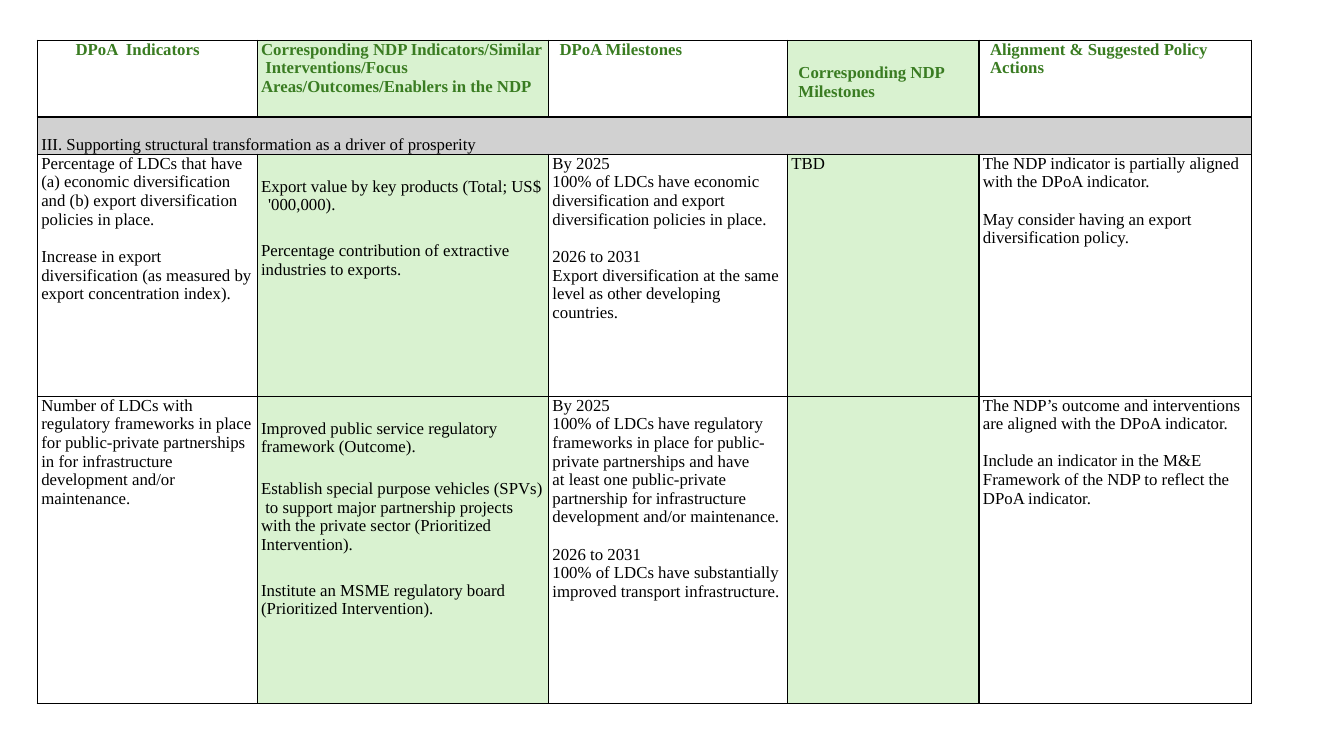
from dataclasses import dataclass

from lxml import etree
from pptx import Presentation
from pptx import util as u
from pptx.dml import color
from pptx.enum import text
from pptx.oxml import ns


@dataclass(frozen=True)
class Theme:
    font: str = "Times New Roman"
    size: float = 12
    blank_line: float = 13.3
    wide_gap: float = 19.5
    heading: str = "3A7C22"
    body: str = "000000"
    border: str = "000000"
    border_width: float = 1
    ndp_fill: str = "D9F2D0"
    section_fill: str = "D1D1D1"


THEME = Theme()


@dataclass(frozen=True)
class Line:
    text: str
    before: float = 0
    indent: float = 0
    justified: bool = False


@dataclass(frozen=True)
class Entry:
    lines: tuple[Line, ...] = ()
    top: float = 0


GAP = THEME.blank_line
WIDE = THEME.wide_gap
COLUMN_WIDTHS = (2.18, 2.89, 2.37, 1.9, 2.7)
ROW_HEIGHTS = (0.76, 0.37, 2.4, 3.05)
NDP_COLUMNS = (1, 3)
SECTION = Entry((Line("III. Supporting structural transformation as a driver of prosperity"),), top=0.18)

HEADINGS = (
    Entry((Line("DPoA  Indicators", indent=0.34),)),
    Entry((Line("Corresponding NDP Indicators/Similar  Interventions/Focus "
                "Areas/Outcomes/Enablers in the NDP"),)),
    Entry((Line("DPoA Milestones", indent=0.07),)),
    Entry((Line("Corresponding NDP  Milestones", indent=0.07),), top=0.23),
    Entry((Line("Alignment & Suggested Policy Actions", indent=0.07),)),
)

DIVERSIFICATION = (
    Entry((
        Line("Percentage of LDCs that have (a) economic diversification and "
             "(b) export diversification policies in place."),
        Line("Increase in export diversification (as measured by export concentration index).", GAP),
    )),
    Entry((
        Line("Export value by key products (Total; US$", justified=True),
        Line("'000,000).", indent=0.07, justified=True),
        Line("Percentage contribution of extractive industries to exports.", WIDE),
    ), top=0.23),
    Entry((
        Line("By 2025"),
        Line("100% of LDCs have economic diversification and export diversification policies in place."),
        Line("2026 to 2031", GAP),
        Line("Export diversification at the same level as other developing countries."),
    )),
    Entry((Line("TBD"),)),
    Entry((
        Line("The NDP indicator is partially aligned with the DPoA indicator."),
        Line("May consider having an export diversification policy.", GAP),
    )),
)

PARTNERSHIPS = (
    Entry((
        Line("Number of LDCs with regulatory frameworks in place for public-private partnerships"),
        Line("in for infrastructure development and/or maintenance."),
    )),
    Entry((
        Line("Improved public service regulatory"),
        Line("framework (Outcome)."),
        Line("Establish special purpose vehicles (SPVs)  to support major partnership "
             "projects with the private sector (Prioritized Intervention).", 16.3),
        Line("Institute an MSME regulatory board (Prioritized Intervention).", WIDE),
    ), top=0.23),
    Entry((
        Line("By 2025"),
        Line("100% of LDCs have regulatory frameworks in place for public-private partnerships and have"),
        Line("at least one public-private partnership for infrastructure development and/or maintenance."),
        Line("2026 to 2031", GAP),
        Line("100% of LDCs have substantially improved transport infrastructure."),
    )),
    Entry(),
    Entry((
        Line("The NDP’s outcome and interventions are aligned with the DPoA indicator."),
        Line("Include an indicator in the M&E Framework of the NDP to reflect the DPoA indicator.", GAP),
    )),
)


def add_borders(cell) -> None:
    properties = cell._tc.get_or_add_tcPr()
    for side in ("lnL", "lnR", "lnT", "lnB"):
        border = etree.SubElement(properties, ns.qn(f"a:{side}"), w=str(u.Pt(THEME.border_width)))
        fill = etree.SubElement(border, ns.qn("a:solidFill"))
        etree.SubElement(fill, ns.qn("a:srgbClr"), val=THEME.border)


def style_cell(cell, fill: str | None) -> None:
    add_borders(cell)
    if fill:
        cell.fill.solid()
        cell.fill.fore_color.rgb = color.RGBColor.from_string(fill)
    else:
        cell.fill.background()


def write_entry(cell, entry: Entry, heading: bool = False) -> None:
    cell.margin_left = cell.margin_right = u.Inches(0.04)
    cell.margin_top, cell.margin_bottom = u.Inches(entry.top), 0
    frame = cell.text_frame
    frame.text = "\n".join(line.text for line in entry.lines)
    for paragraph, line in zip(frame.paragraphs, entry.lines):
        paragraph.space_before = u.Pt(line.before)
        paragraph.alignment = text.PP_ALIGN.JUSTIFY if line.justified else text.PP_ALIGN.LEFT
        paragraph._p.get_or_add_pPr().set("marL", str(u.Inches(line.indent)))
        for run in paragraph.runs:
            run.font.name = THEME.font
            run.font.size = u.Pt(THEME.size)
            run.font.bold = heading
            run.font.color.rgb = color.RGBColor.from_string(THEME.heading if heading else THEME.body)


def add_alignment_table(slide) -> None:
    table = slide.shapes.add_table(
        len(ROW_HEIGHTS), len(COLUMN_WIDTHS), u.Inches(0.37), u.Inches(0.4),
        u.Inches(sum(COLUMN_WIDTHS)), u.Inches(sum(ROW_HEIGHTS))).table
    table.first_row = table.horz_banding = False
    for column, width in zip(table.columns, COLUMN_WIDTHS):
        column.width = u.Inches(width)
    for row, height in zip(table.rows, ROW_HEIGHTS):
        row.height = u.Inches(height)

    # Heading and indicator rows
    for row_index, entries in ((0, HEADINGS), (2, DIVERSIFICATION), (3, PARTNERSHIPS)):
        for column_index, entry in enumerate(entries):
            cell = table.cell(row_index, column_index)
            style_cell(cell, THEME.ndp_fill if column_index in NDP_COLUMNS else None)
            write_entry(cell, entry, heading=row_index == 0)

    # Section band across all columns
    for cell in table.rows[1].cells:
        style_cell(cell, THEME.section_fill)
    band = table.cell(1, 0)
    band.merge(table.cell(1, len(COLUMN_WIDTHS) - 1))
    write_entry(band, SECTION)
    for cell in list(table.rows[1].cells)[1:]:
        write_entry(cell, Entry())


def main() -> None:
    presentation = Presentation()
    presentation.slide_width = u.Inches(13.33)
    presentation.slide_height = u.Inches(7.5)
    slide = presentation.slides.add_slide(presentation.slide_layouts[6])
    add_alignment_table(slide)
    presentation.save("out.pptx")


if __name__ == "__main__":
    main()
